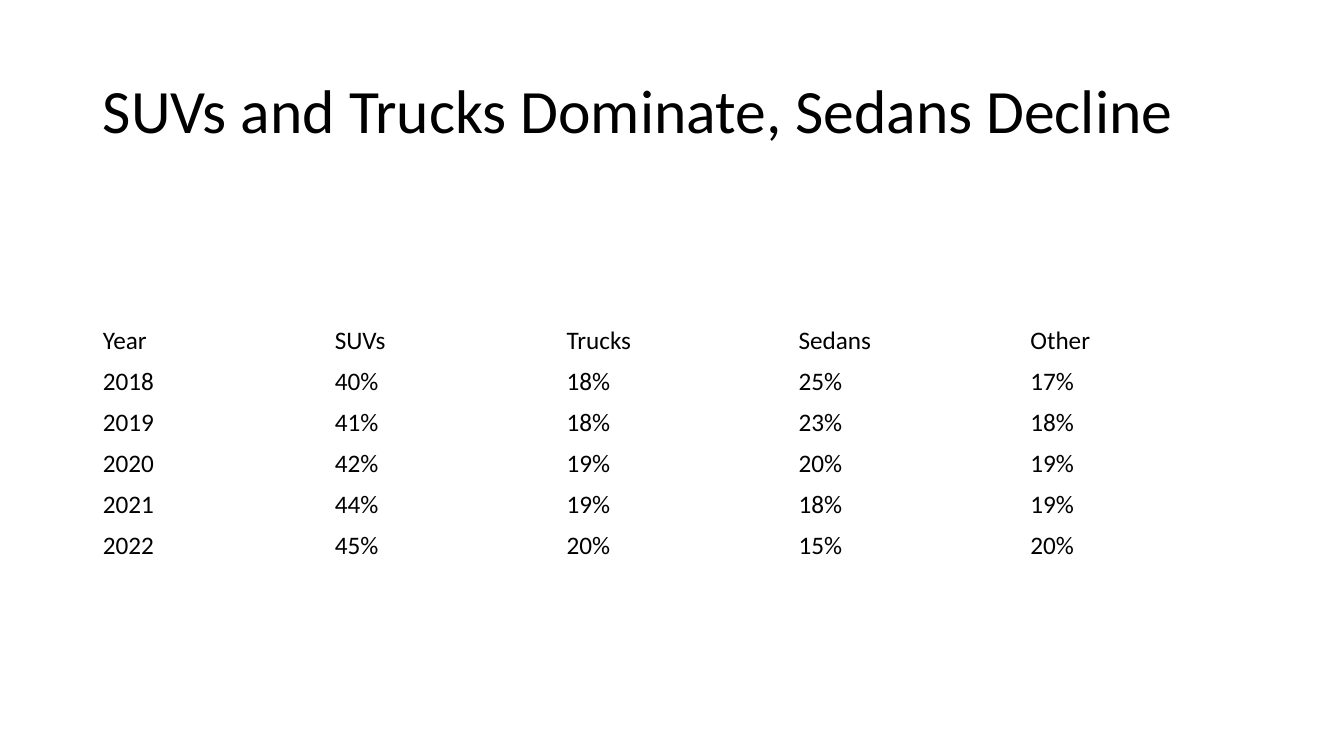
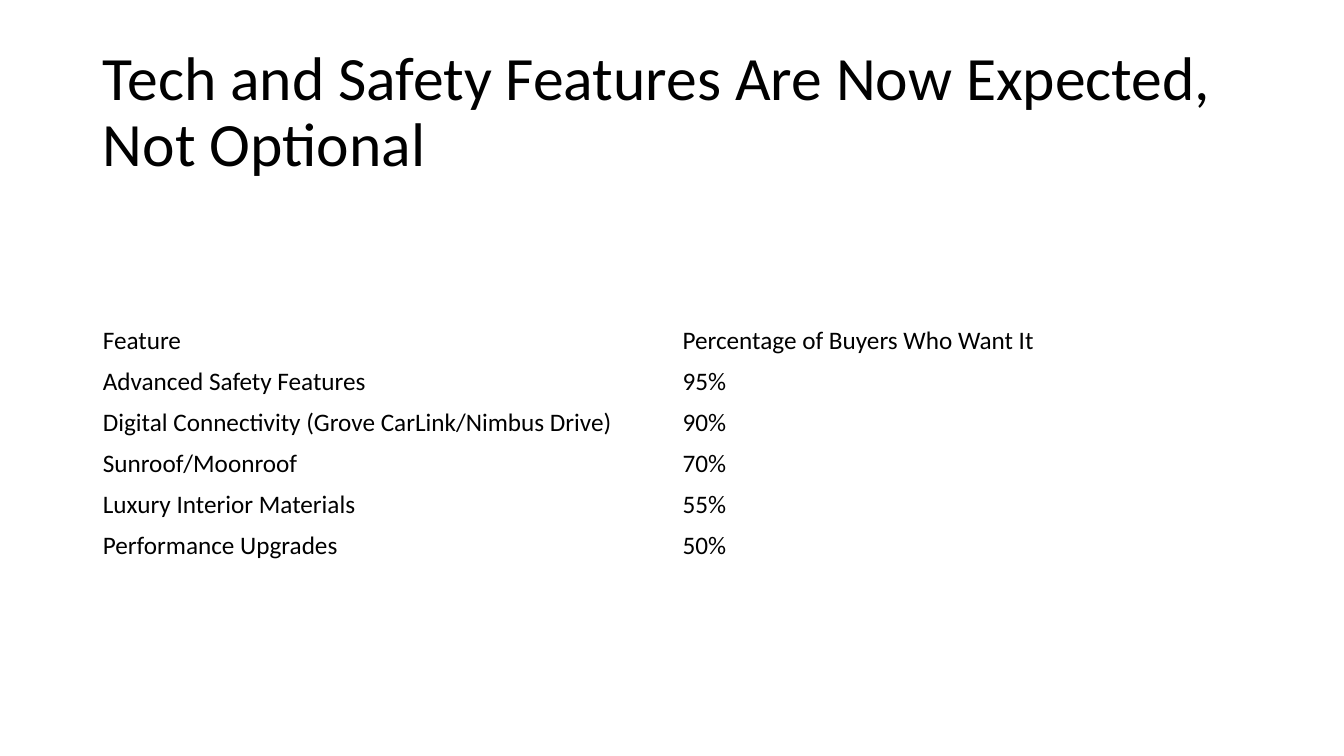
from pptx import Presentation
from pptx.dml.color import RGBColor
from pptx.enum.text import MSO_ANCHOR, MSO_AUTO_SIZE, PP_ALIGN
from pptx.util import Pt

PX = 9144  # EMU per px, 100 px to the inch
BLACK = RGBColor(0x00, 0x00, 0x00)
FONT = "Calibri"
LEFT, MIDDLE, NO_FIT = PP_ALIGN.LEFT, MSO_ANCHOR.MIDDLE, MSO_AUTO_SIZE.NONE

# Shared layout
SLIDE_W, SLIDE_H = 1333, 750
MARGIN, CONTENT_W = 92, 1150
TITLE_TOP, TITLE_H = 40, 145
TABLE_TOP, ROW_H = 318, 40
TITLE_SIZE, CELL_SIZE = 44, 18

# Content: title and table rows of each slide
SLIDES = [
    ("SUVs and Trucks Dominate, Sedans Decline", [
        ("Year", "SUVs", "Trucks", "Sedans", "Other"),
        ("2018", "40%", "18%", "25%", "17%"),
        ("2019", "41%", "18%", "23%", "18%"),
        ("2020", "42%", "19%", "20%", "19%"),
        ("2021", "44%", "19%", "18%", "19%"),
        ("2022", "45%", "20%", "15%", "20%"),
    ]),
    ("Tech and Safety Features Are Now Expected, Not Optional", [
        ("Feature", "Percentage of Buyers Who Want It"),
        ("Advanced Safety Features", "95%"),
        ("Digital Connectivity (Grove CarLink/Nimbus Drive)", "90%"),
        ("Sunroof/Moonroof", "70%"),
        ("Luxury Interior Materials", "55%"),
        ("Performance Upgrades", "50%"),
    ]),
]


def add_text(paragraph, text, size):
    paragraph.alignment = LEFT
    run = paragraph.add_run()
    run.text = text
    run.font.name = FONT
    run.font.size = Pt(size)
    run.font.color.rgb = BLACK


prs = Presentation()
prs.slide_width, prs.slide_height = SLIDE_W * PX, SLIDE_H * PX
title_only = prs.slide_layouts[5]

for heading, rows in SLIDES:
    slide = prs.slides.add_slide(title_only)

    # Title
    title = slide.shapes.title
    title.left, title.top = MARGIN * PX, TITLE_TOP * PX
    title.width, title.height = CONTENT_W * PX, TITLE_H * PX
    frame = title.text_frame
    frame.word_wrap = True
    frame.auto_size = NO_FIT
    frame.vertical_anchor = MIDDLE
    frame.paragraphs[0].line_spacing = 0.9
    add_text(frame.paragraphs[0], heading, TITLE_SIZE)

    # Plain table with equal columns
    table = slide.shapes.add_table(
        len(rows), len(rows[0]), MARGIN * PX, TABLE_TOP * PX,
        CONTENT_W * PX, ROW_H * len(rows) * PX).table
    table.first_row = False
    table.horz_banding = False
    for r, row in enumerate(rows):
        for c, value in enumerate(row):
            cell = table.cell(r, c)
            cell.fill.background()
            cell.vertical_anchor = MIDDLE
            add_text(cell.text_frame.paragraphs[0], value, CELL_SIZE)

prs.save("out.pptx")
